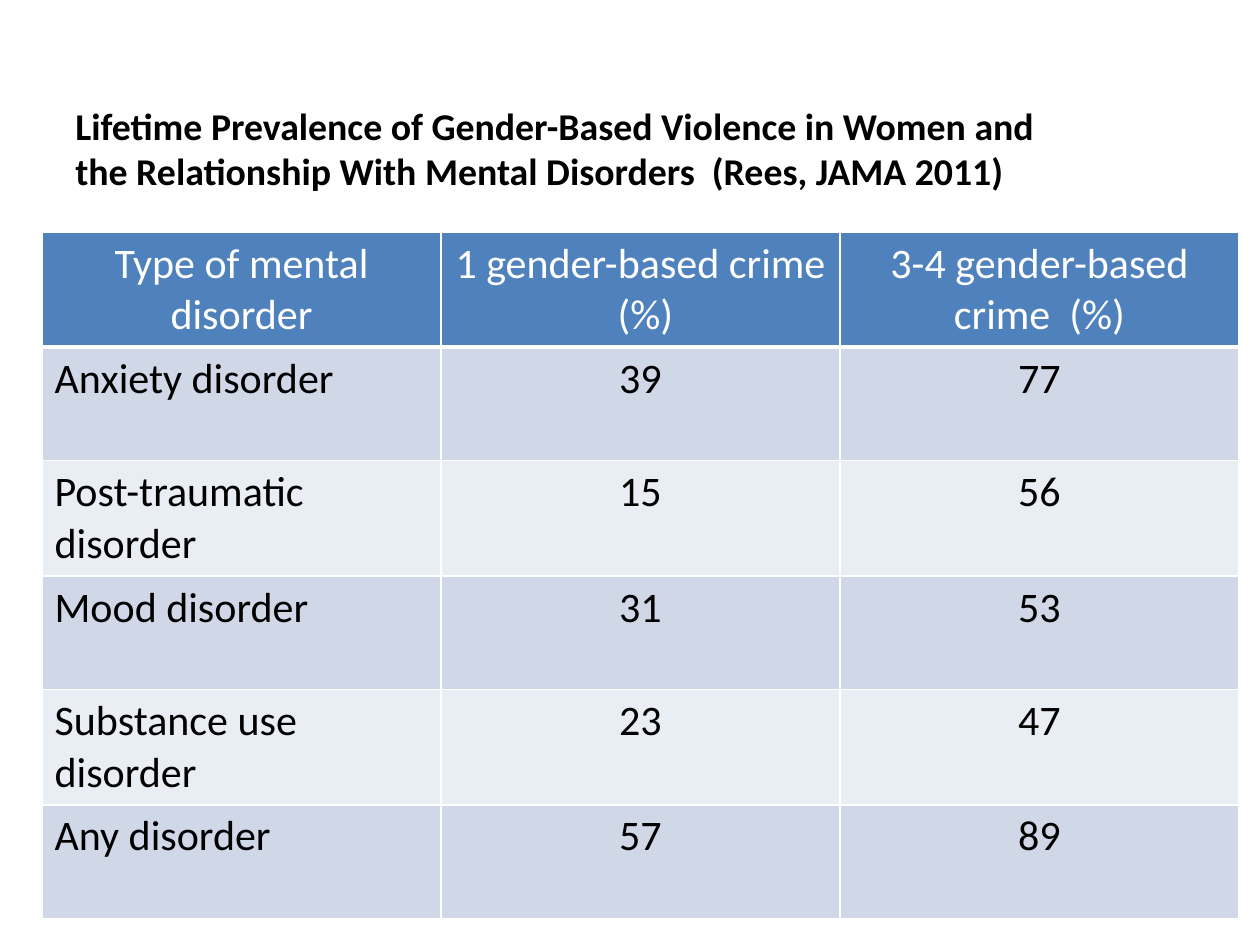
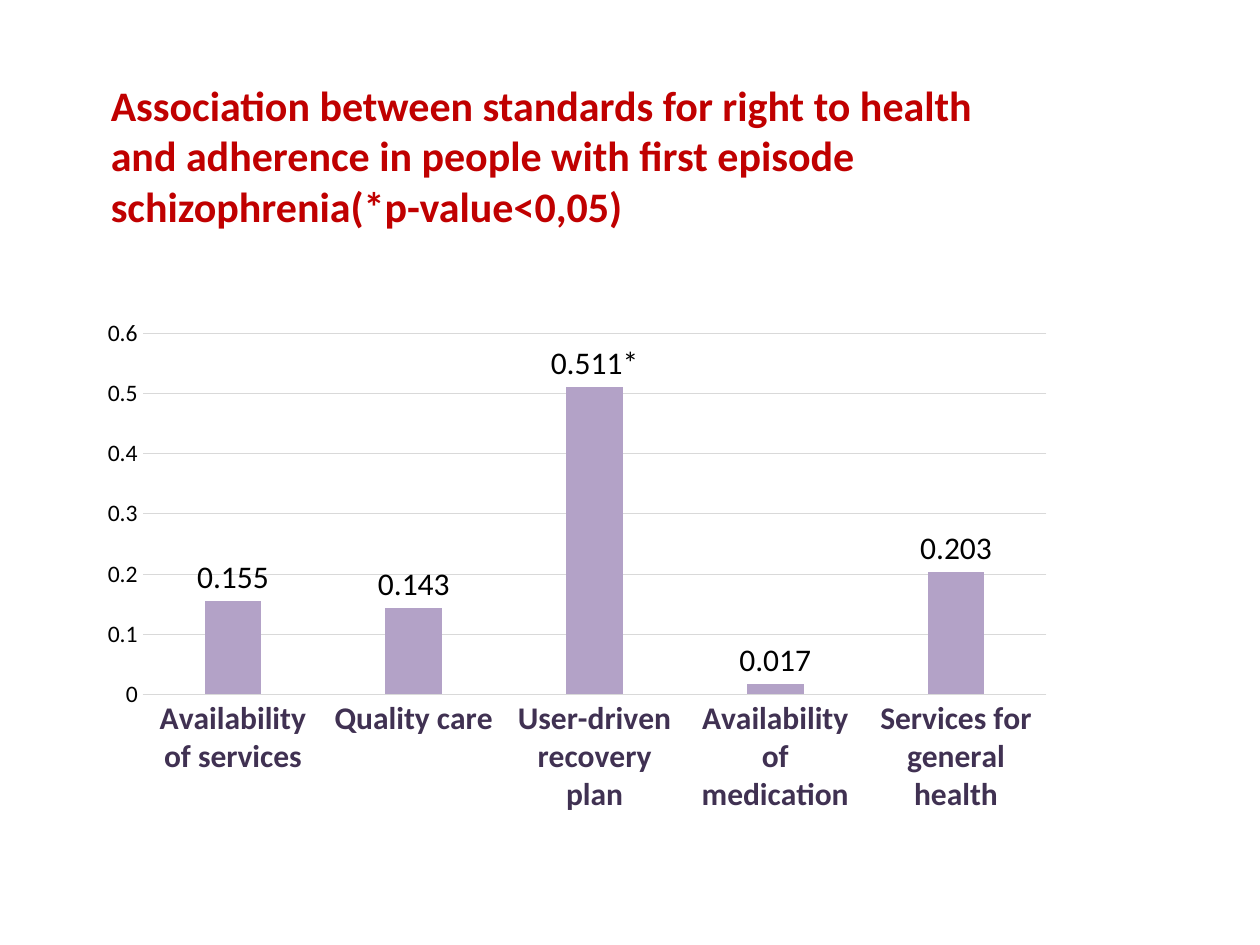
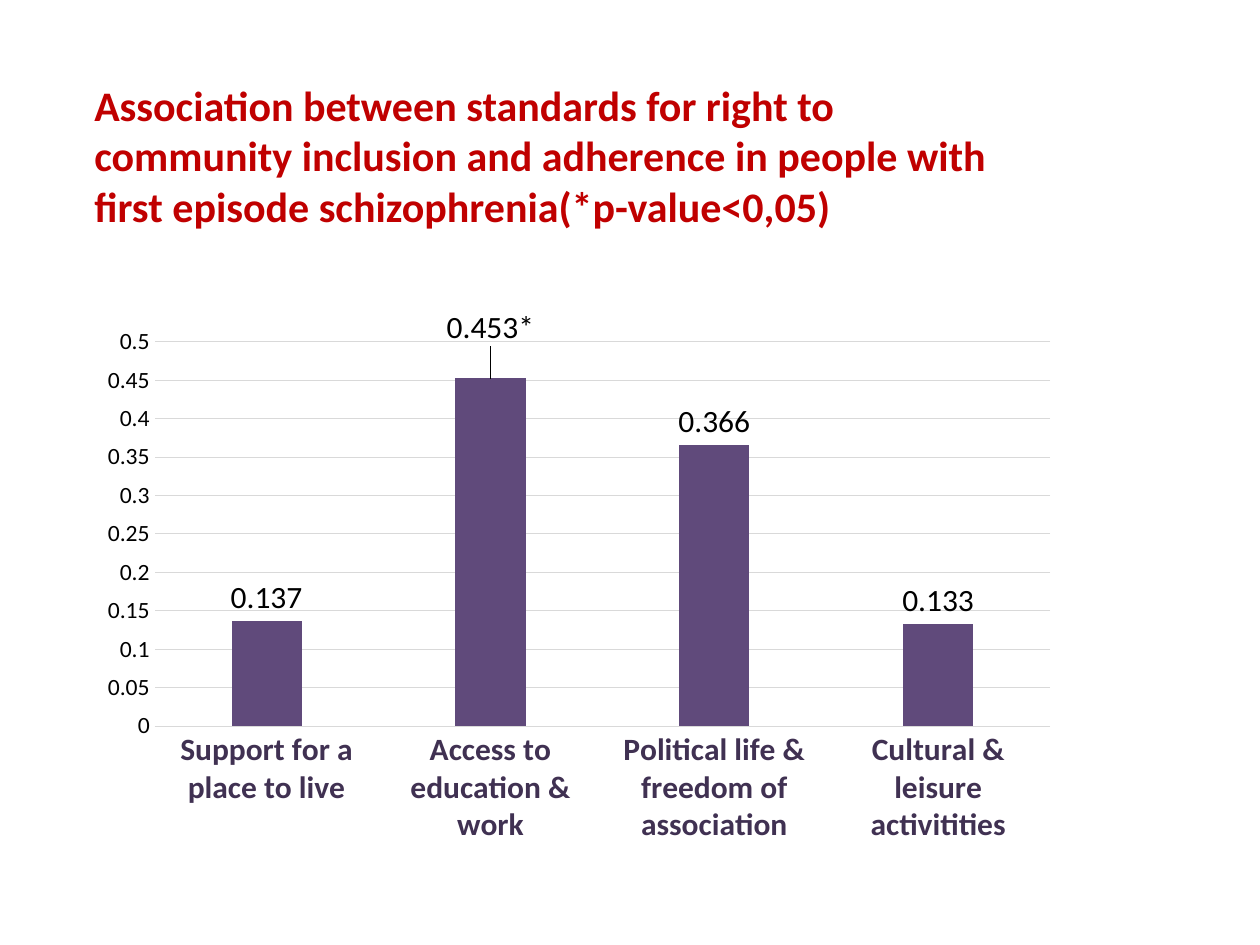
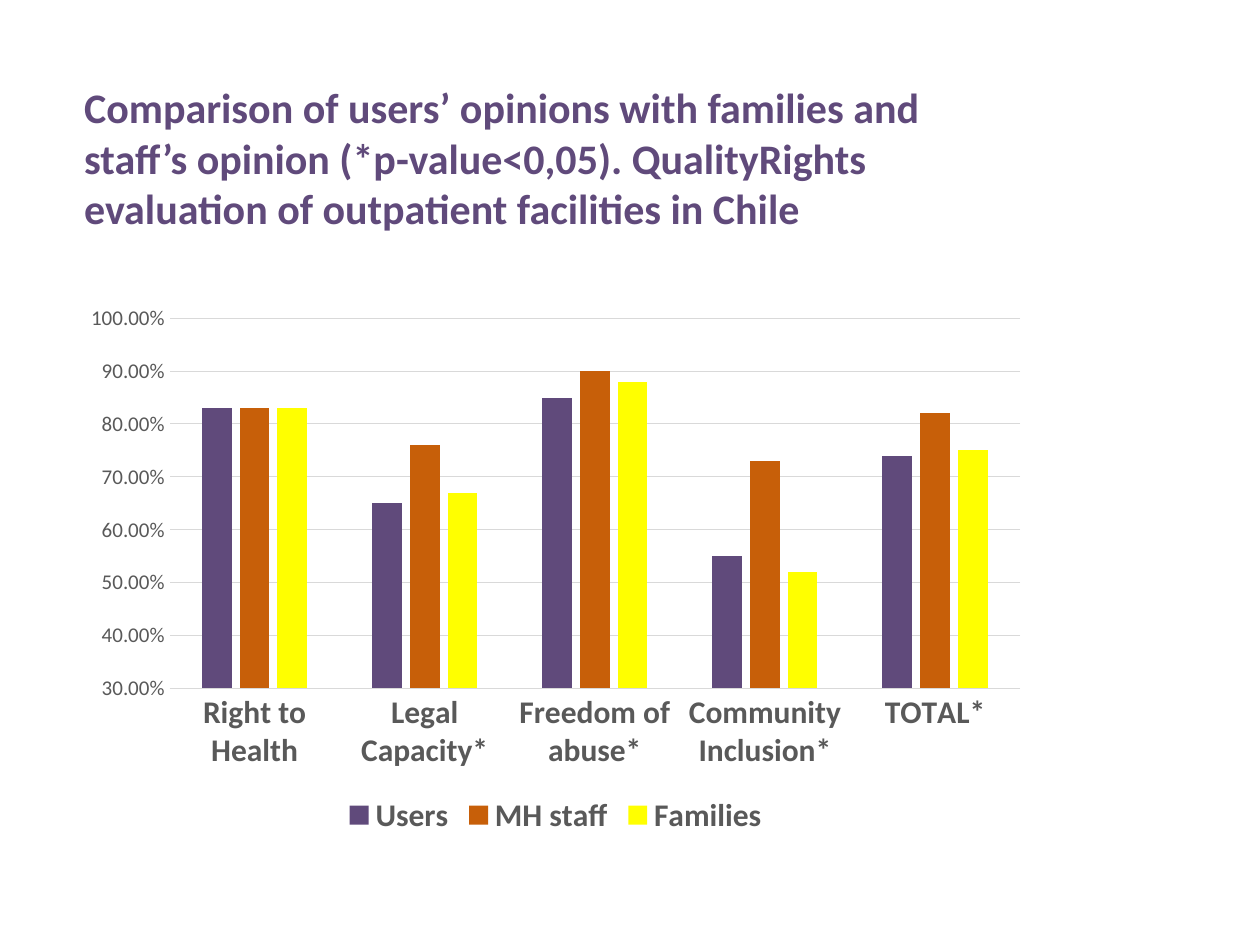
"""Build four slides on rights, violence and mental health."""
from pptx import Presentation
from pptx.chart.data import CategoryChartData
from pptx.dml.color import RGBColor
from pptx.enum.chart import XL_CHART_TYPE, XL_LABEL_POSITION, XL_LEGEND_POSITION, XL_TICK_MARK
from pptx.enum.text import MSO_ANCHOR, PP_ALIGN
from pptx.oxml import parse_xml
from pptx.oxml.ns import nsdecls, qn
from pptx.util import Pt

WHITE = RGBColor(0xFF, 0xFF, 0xFF)
BLACK = RGBColor(0x00, 0x00, 0x00)
RED = RGBColor(0xC0, 0x00, 0x00)
BLUE = RGBColor(0x4F, 0x81, 0xBD)
BAND_DARK = RGBColor(0xD0, 0xD8, 0xE8)
BAND_LIGHT = RGBColor(0xE9, 0xED, 0xF4)
LILAC = RGBColor(0xB3, 0xA2, 0xC7)
PURPLE = RGBColor(0x60, 0x4A, 0x7B)
DEEP_PURPLE = RGBColor(0x40, 0x31, 0x52)
ORANGE = RGBColor(0xC7, 0x5F, 0x09)
YELLOW = RGBColor(0xFF, 0xFF, 0x00)
GRAY = RGBColor(0x59, 0x59, 0x59)
GRID = RGBColor(0xD9, 0xD9, 0xD9)


class Deck:
    """Hold the shared style and the current slide."""

    def __init__(self):
        self.presentation = Presentation()
        self.presentation.slide_width = Pt(720)
        self.presentation.slide_height = Pt(540)
        self.slide = None

    def add_slide(self):
        """Start a blank slide."""
        self.slide = self.presentation.slides.add_slide(self.presentation.slide_layouts[6])

    def style(self, font, size, color, bold=False):
        """Apply the deck's typeface with a size and colour."""
        font.name = "Calibri"
        font.size = Pt(size)
        font.bold = bold
        font.color.rgb = color

    def title(self, text, box, color=RED, size=24):
        """Add a bold title centred vertically in its box."""
        frame = self.slide.shapes.add_textbox(*map(Pt, box)).text_frame
        frame.word_wrap = True
        frame.vertical_anchor = MSO_ANCHOR.MIDDLE
        run = frame.paragraphs[0].add_run()
        run.text = text
        self.style(run.font, size, color, bold=True)

    def borders(self, cell, bottom):
        """Draw white borders round a table cell."""
        properties = cell._tc.get_or_add_tcPr()
        widths = {"lnL": 1, "lnR": 1, "lnT": 1, "lnB": bottom}
        for index, (side, width) in enumerate(widths.items()):
            properties.insert(index, parse_xml(
                f'<a:{side} {nsdecls("a")} w="{Pt(width)}"><a:solidFill>'
                f'<a:srgbClr val="{WHITE}"/></a:solidFill></a:{side}>'))

    def table(self, rows, box):
        """Add an evenly divided table with a header and banded rows."""
        table = self.slide.shapes.add_table(len(rows), len(rows[0]), *map(Pt, box)).table
        for row_index, row in enumerate(rows):
            header = row_index == 0
            band = BAND_DARK if row_index % 2 else BAND_LIGHT
            for column_index, text in enumerate(row):
                cell = table.cell(row_index, column_index)
                cell.fill.solid()
                cell.fill.fore_color.rgb = BLUE if header else band
                paragraph = cell.text_frame.paragraphs[0]
                if header or column_index:
                    paragraph.alignment = PP_ALIGN.CENTER
                run = paragraph.add_run()
                run.text = text
                self.style(run.font, 24, WHITE if header else BLACK)
                self.borders(cell, 3 if header else 1)

    def chart(self, categories, series, box, scale, text_color=DEEP_PURPLE,
              value_style=(13.5, BLACK), number_format="General"):
        """Add a column chart from (name, values, colour) series."""
        data = CategoryChartData()
        data.categories = categories
        for name, values, _ in series:
            data.add_series(name, values)
        chart = self.slide.shapes.add_chart(
            XL_CHART_TYPE.COLUMN_CLUSTERED, *map(Pt, box), data).chart
        self.style(chart.font, 10, BLACK)
        chart.has_title = False
        chart.has_legend = len(series) > 1
        if chart.has_legend:
            chart.legend.position = XL_LEGEND_POSITION.BOTTOM
            chart.legend.include_in_layout = False
            self.style(chart.legend.font, 18, text_color, bold=True)

        plot = chart.plots[0]
        plot.gap_width = 219
        plot.overlap = -27
        plot.vary_by_categories = False
        for bars, (_, _, color) in zip(plot.series, series):
            bars.format.fill.solid()
            bars.format.fill.fore_color.rgb = color

        category_axis, value_axis = chart.category_axis, chart.value_axis
        for axis in (category_axis, value_axis):
            axis.major_tick_mark = axis.minor_tick_mark = XL_TICK_MARK.NONE
        self.style(category_axis.tick_labels.font, 18, text_color, bold=True)
        self.style(value_axis.tick_labels.font, *value_style)
        value_axis.tick_labels.number_format = number_format
        value_axis.tick_labels.number_format_is_linked = False
        value_axis.minimum_scale, value_axis.maximum_scale, value_axis.major_unit = scale
        value_axis.format.line.fill.background()
        for line in (category_axis.format.line, value_axis.major_gridlines.format.line):
            line.color.rgb = GRID
            line.width = Pt(0.56)
        return chart

    def value_labels(self, chart, starred, text, lift=0):
        """Label the bars, with special text on the starred one, lifted if asked."""
        bars = chart.plots[0].series[0]
        labels = bars.data_labels
        labels.show_value = True
        labels.position = XL_LABEL_POSITION.OUTSIDE_END
        self.style(labels.font, 18, BLACK)
        label = bars.points[starred].data_label
        run = label.text_frame.paragraphs[0].add_run()
        run.text = text
        self.style(run.font, 18, BLACK)
        label.position = XL_LABEL_POSITION.OUTSIDE_END
        if lift:
            bars._element.find(".//" + qn("c:dLbl")).insert(1, parse_xml(
                f'<c:layout {nsdecls("c")}><c:manualLayout><c:x val="0"/>'
                f'<c:y val="{-lift}"/></c:manualLayout></c:layout>'))


def main():
    """Build the slides and save them."""
    deck = Deck()

    deck.add_slide()
    deck.table([
        ("Type of mental disorder", "1 gender-based crime  (%)", "3-4 gender-based crime  (%)"),
        ("Anxiety disorder", "39", "77"),
        ("Post-traumatic disorder", "15", "56"),
        ("Mood disorder", "31", "53"),
        ("Substance use disorder", "23", "47"),
        ("Any disorder", "57", "89"),
    ], (24, 132.5, 684, 390))
    deck.title("Lifetime Prevalence of Gender-Based Violence in Women and the Relationship "
               "With Mental Disorders  (Rees, JAMA 2011)",
               (36, 39.6, 564.5, 90), BLACK, 21.6)

    deck.add_slide()
    deck.title("Association between standards for right to health and adherence in people "
               "with first episode schizophrenia(*p-value<0,05)", (56.2, 49.7, 536.4, 77.8))
    health = deck.chart(
        ["Availability of services", "Quality care", "User-driven recovery plan",
         "Availability of medication", "Services for general health"],
        [("Series 1", (0.155, 0.143, 0.511, 0.017, 0.203), LILAC)],
        (50.4, 176.4, 558.7, 294.5), (0, 0.6, 0.1))
    deck.value_labels(health, 2, "0.511*")

    deck.add_slide()
    deck.title("Association between standards for right to community inclusion and adherence "
               "in people with first episode schizophrenia(*p-value<0,05)",
               (46.8, 49.7, 555.1, 77.8))
    inclusion = deck.chart(
        ["Support for a place to live", "Access to education & work",
         "Political life & freedom of association", "Cultural & leisure activitities"],
        [("Series 1", (0.137, 0.453, 0.366, 0.133), PURPLE)],
        (50.4, 176.4, 560.9, 311.8), (0, 0.5, 0.05))
    deck.value_labels(inclusion, 1, "0.453*", lift=0.05)

    deck.add_slide()
    deck.title("Comparison of users’ opinions with families and staff’s opinion "
               "(*p-value<0,05). QualityRights evaluation of outpatient facilities in Chile",
               (41, 51.1, 544.3, 77.8), PURPLE)
    deck.chart(
        ["Right to Health", "Legal Capacity*", "Freedom of abuse*", "Community Inclusion*",
         "TOTAL*"],
        [("Users", (0.83, 0.65, 0.85, 0.55, 0.74), PURPLE),
         ("MH staff", (0.83, 0.76, 0.9, 0.73, 0.82), ORANGE),
         ("Families", (0.83, 0.67, 0.88, 0.52, 0.75), YELLOW)],
        (41, 168.5, 553, 311.8), (0.3, 1, 0.1), GRAY, (12, GRAY), "0.00%")

    deck.presentation.save("out.pptx")


if __name__ == "__main__":
    main()
